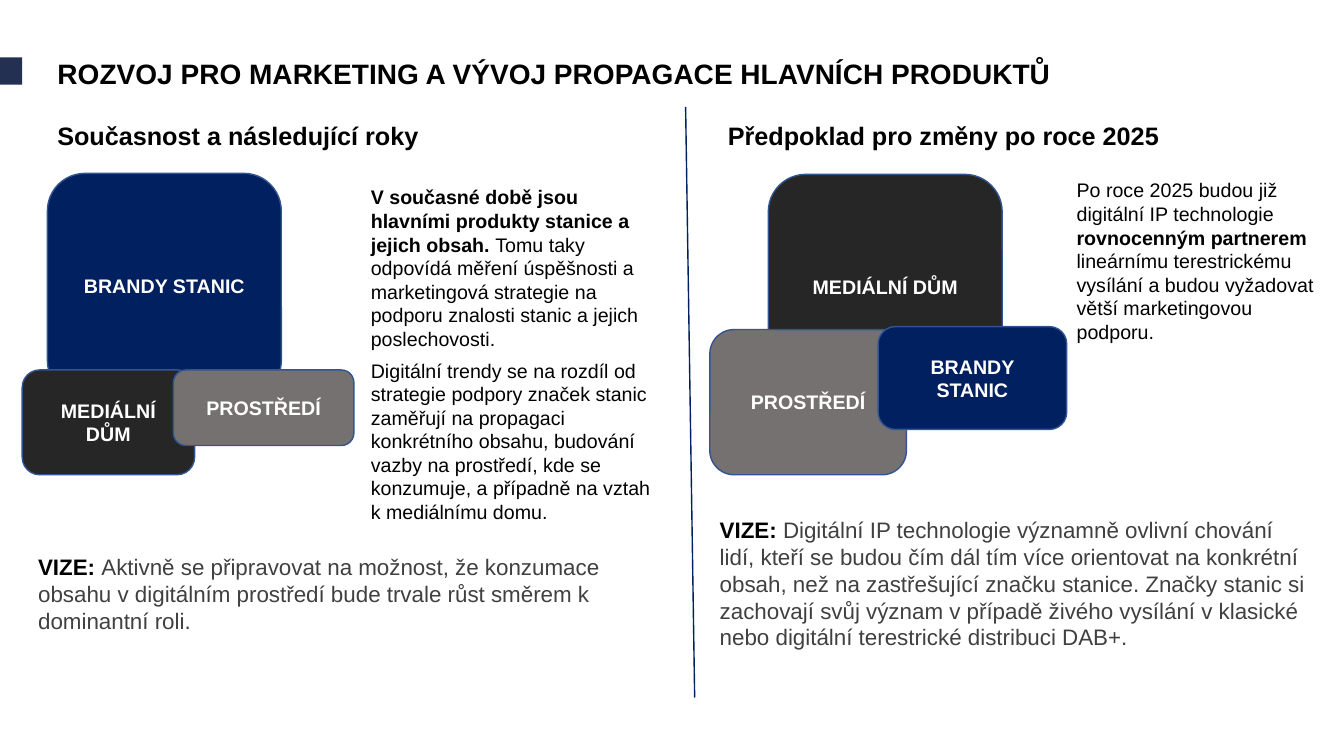
import pptx
import pptx.util
import pptx.dml.color
import pptx.enum.shapes
import pptx.enum.text
import pptx.oxml.ns
import lxml.etree

Inches = pptx.util.Inches
SHAPE = pptx.enum.shapes.MSO_SHAPE
ALIGN = pptx.enum.text.PP_ALIGN
ANCHOR = pptx.enum.text.MSO_ANCHOR

COLORS = {
    "accent": "233052",
    "navy": "002060",
    "dark": "262626",
    "gray": "767171",
    "outline": "325491",
    "black": "000000",
    "body": "404040",
    "white": "FFFFFF",
}


class Deck:
    font = "Arial"

    def __init__(self, prs):
        self.s = prs.slides.add_slide(prs.slide_layouts[5])

    def color(self, name):
        return pptx.dml.color.RGBColor.from_string(COLORS[name])

    def style(self, r, size, color, bold):
        r.font.name = self.font
        r.font.size = pptx.util.Pt(size)
        r.font.bold = bold
        r.font.color.rgb = self.color(color)

    def title(self, text, x, y, w, h):
        sp = self.s.shapes.title
        sp.left, sp.top, sp.width, sp.height = map(Inches, (x, y, w, h))
        tf = sp.text_frame
        tf.text = text
        tf.auto_size = pptx.enum.text.MSO_AUTO_SIZE.NONE
        tf.vertical_anchor = ANCHOR.TOP
        p = tf.paragraphs[0]
        p.alignment = ALIGN.LEFT
        self.style(p.runs[0], 20, "black", True)

    def box(self, kind, x, y, w, h, fill, outline=None):
        sp = self.s.shapes.add_shape(kind, *map(Inches, (x, y, w, h)))
        sp.shadow.inherit = False
        sp.fill.solid()
        sp.fill.fore_color.rgb = self.color(fill)
        if outline:
            sp.line.color.rgb = self.color(outline)
            sp.line.width = pptx.util.Pt(1)
        else:
            sp.line.fill.background()
        return sp

    def block(self, text, x, y, w, h, fill):
        sp = self.box(SHAPE.ROUNDED_RECTANGLE, x, y, w, h, fill, "outline")
        tf = sp.text_frame
        tf.text = text
        tf.vertical_anchor = ANCHOR.MIDDLE
        p = tf.paragraphs[0]
        p.alignment = ALIGN.CENTER
        self.style(p.runs[0], 14, "white", True)

    def text(self, paragraphs, x, y, w, h, size, color="black", after=6):
        tf = self.s.shapes.add_textbox(*map(Inches, (x, y, w, h))).text_frame
        tf.word_wrap = True
        for i, parts in enumerate(paragraphs):
            p = tf.paragraphs[0] if i == 0 else tf.add_paragraph()
            p.space_after = pptx.util.Pt(after)
            for text, bold in parts:
                r = p.add_run()
                r.text = text
                self.style(r, size, "black" if bold else color, bold)

    def heading(self, text, x, y, w, h):
        self.text([[(text, True)]], x, y, w, h, 18, after=0)

    def vision(self, text, x, y, w, h):
        self.text([[("VIZE: ", True), (text, False)]], x, y, w, h, 16, "body")

    def line(self, x1, y1, x2, y2, color):
        c = self.s.shapes.add_connector(
            pptx.enum.shapes.MSO_CONNECTOR.STRAIGHT, *map(Inches, (x1, y1, x2, y2)))
        c.line.color.rgb = self.color(color)
        c.line.width = pptx.util.Pt(1)
        lxml.etree.SubElement(c._element.spPr, pptx.oxml.ns.qn("a:effectLst"))


def main():
    prs = pptx.Presentation()
    prs.slide_width, prs.slide_height = Inches(13.33), Inches(7.5)
    deck = Deck(prs)

    deck.box(SHAPE.RECTANGLE, 0, 0.57, 0.22, 0.27, "accent")
    deck.title("ROZVOJ PRO MARKETING A VÝVOJ PROPAGACE HLAVNÍCH PRODUKTŮ",
               0.47, 0.51, 12.28, 0.44)

    for block in (
        ("BRANDY STANIC", 0.47, 1.72, 2.32, 2.23, "navy"),
        ("MEDIÁLNÍ DŮM", 7.62, 1.73, 2.32, 2.23, "dark"),
        ("PROSTŘEDÍ", 7.04, 3.27, 1.95, 1.44, "gray"),
        ("BRANDY STANIC", 8.71, 3.24, 1.87, 1.02, "navy"),
        ("MEDIÁLNÍ DŮM", 0.22, 3.67, 1.71, 1.04, "dark"),
        ("PROSTŘEDÍ", 1.72, 3.67, 1.79, 0.75, "gray"),
    ):
        deck.block(*block)

    deck.line(6.8, 1.06, 6.89, 6.92, "navy")
    deck.heading("Současnost a následující roky", 0.47, 1.14, 4.26, 0.4)
    deck.heading("Předpoklad pro změny po roce 2025", 7.12, 1.14, 5.44, 0.4)

    deck.text([
        [("V současné době jsou hlavními produkty stanice a jejich obsah. ", True),
         ("Tomu taky odpovídá měření úspěšnosti a marketingová strategie na "
          "podporu znalosti stanic a jejich poslechovosti.", False)],
        [("Digitální trendy se na rozdíl od strategie podpory značek stanic "
          "zaměřují na propagaci konkrétního obsahu, budování vazby na prostředí, "
          "kde se konzumuje, a případně na vztah k mediálnímu domu.", False)],
    ], 3.58, 1.79, 3.1, 3.8, 14)
    deck.text([
        [("Po roce 2025 budou již digitální IP technologie ", False),
         ("rovnocenným partnerem ", True),
         ("lineárnímu terestrickému vysílání a budou vyžadovat větší "
          "marketingovou podporu.", False)],
    ], 10.58, 1.72, 2.73, 1.75, 14)

    deck.vision("Aktivně se připravovat na možnost, že konzumace obsahu v digitálním "
                "prostředí bude trvale růst směrem k dominantní roli.",
                0.28, 5.44, 6.44, 0.91)
    deck.vision("Digitální IP technologie významně ovlivní chování lidí, kteří se budou "
                "čím dál tím více orientovat na konkrétní obsah, než na zastřešující "
                "značku stanice. Značky stanic si zachovají svůj význam v případě živého "
                "vysílání v klasické nebo digitální terestrické distribuci DAB+.",
                7.04, 5.07, 6.07, 1.45)

    prs.save("out.pptx")


if __name__ == "__main__":
    main()
